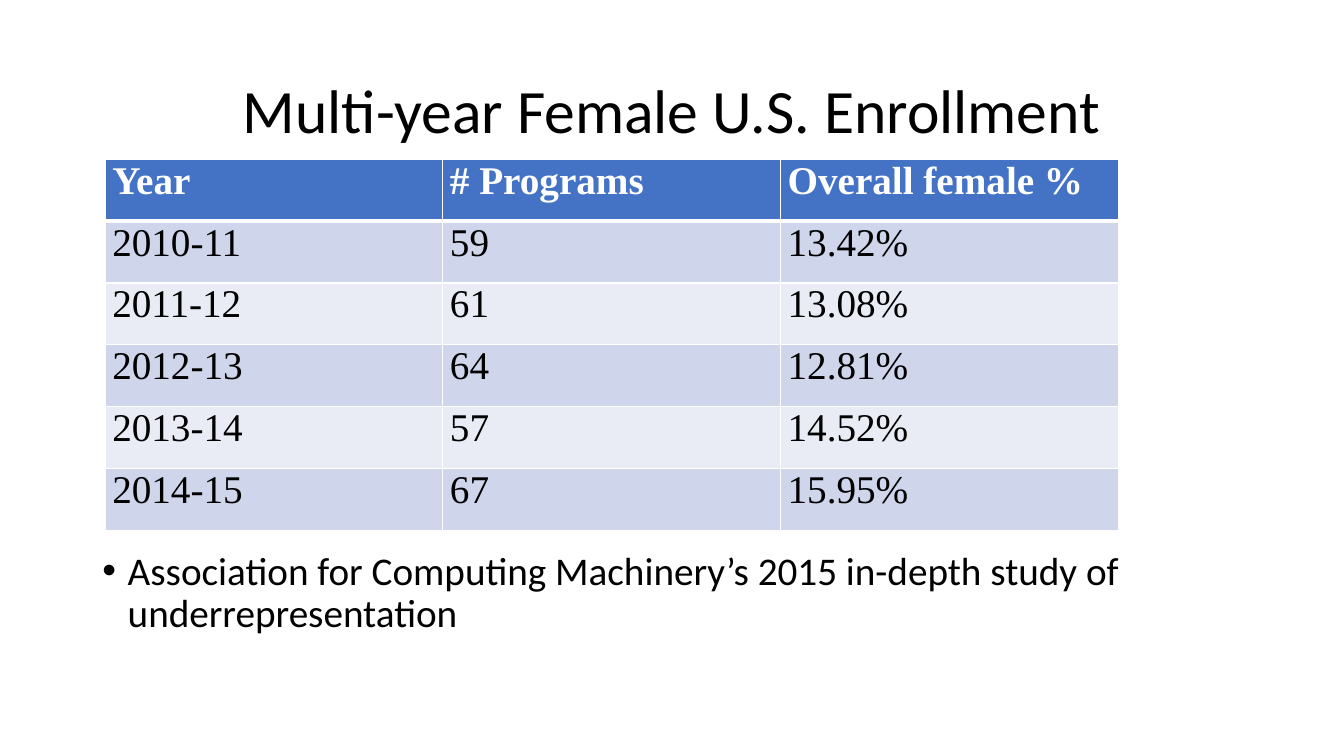
"""Build a slide with a table of female enrollment by year."""
from lxml import etree
from pptx import Presentation
from pptx.dml.color import RGBColor
from pptx.enum import text
from pptx.oxml import ns
from pptx.util import Cm, Pt

ENROLLMENT = [
    ("Year", "# Programs", "Overall female %"),
    ("2010-11", "59", "13.42%"),
    ("2011-12", "61", "13.08%"),
    ("2012-13", "64", "12.81%"),
    ("2013-14", "57", "14.52%"),
    ("2014-15", "67", "15.95%"),
]
HEADER_FILL = "4472C4"
BAND_FILLS = ("E9EBF5", "CFD5EA")


def color(value):
    """Return the colour for a hex string."""
    return RGBColor.from_string(value)


def style_font(paragraph, name, size, value="000000", bold=False):
    """Set the font of every span in a paragraph."""
    for span in paragraph.runs:
        span.font.name = name
        span.font.size = Pt(size)
        span.font.bold = bold
        span.font.color.rgb = color(value)


def add_text(page, content, top, height, size):
    """Add a wide Calibri text box and return it."""
    box = page.shapes.add_textbox(Cm(2.33), Cm(top), Cm(29.21), Cm(height))
    box.text_frame.word_wrap = True
    box.text_frame.text = content
    paragraph = box.text_frame.paragraphs[0]
    paragraph.line_spacing = 0.9
    style_font(paragraph, "Calibri", size)
    return box


def add_title(page, content):
    """Add the centred slide title."""
    box = add_text(page, content, 1.01, 3.68, 44)
    box.text_frame.vertical_anchor = text.MSO_ANCHOR.MIDDLE
    box.text_frame.paragraphs[0].alignment = text.PP_ALIGN.CENTER


def add_bullet(page, content):
    """Add a bulleted note with a hanging indent."""
    box = add_text(page, content, 13.77, 3.02, 28)
    properties = box.text_frame.paragraphs[0]._p.get_or_add_pPr()
    indent = Cm(0.64)
    properties.set("marL", str(indent))
    properties.set("indent", str(-indent))
    font = etree.SubElement(properties, ns.qn("a:buFont"))
    font.set("typeface", "Arial")
    etree.SubElement(properties, ns.qn("a:buChar")).set("char", "•")


def add_borders(cell, widths):
    """Draw white cell borders with a width in points for each side."""
    properties = cell._tc.get_or_add_tcPr()
    for side, width in widths.items():
        line = etree.SubElement(properties, ns.qn(f"a:ln{side}"))
        line.set("w", str(Pt(width)))
        fill = etree.SubElement(line, ns.qn("a:solidFill"))
        etree.SubElement(fill, ns.qn("a:srgbClr")).set("val", "FFFFFF")


def style_cell(cell, content, row):
    """Fill one table cell and format its text."""
    header = row == 0
    add_borders(cell, {"L": 1, "R": 1, "T": 3 if row == 1 else 1, "B": 3 if header else 1})
    cell.fill.solid()
    cell.fill.fore_color.rgb = color(HEADER_FILL if header else BAND_FILLS[row % 2])
    cell.margin_left = cell.margin_right = Cm(0.18)
    cell.margin_top = cell.margin_bottom = 0
    cell.text_frame.text = content
    paragraph = cell.text_frame.paragraphs[0]
    paragraph.alignment = text.PP_ALIGN.JUSTIFY
    style_font(paragraph, "Times New Roman", 28, "FFFFFF" if header else "000000", header)


def add_enrollment_table(page, rows):
    """Add the enrollment table with equal rows and columns."""
    count, width = len(rows), len(rows[0])
    frame = page.shapes.add_table(
        count, width, Cm(2.65), Cm(4.01), Cm(8.51) * width, Cm(1.56) * count)
    for row, values in enumerate(rows):
        for column, content in enumerate(values):
            style_cell(frame.table.cell(row, column), content, row)


def main():
    """Build and save the deck."""
    deck = Presentation()
    deck.slide_width, deck.slide_height = Cm(33.87), Cm(19.05)
    page = deck.slides.add_slide(deck.slide_layouts[6])
    add_title(page, "Multi-year Female U.S. Enrollment")
    add_bullet(page, "Association for Computing Machinery’s 2015 in-depth study of underrepresentation")
    add_enrollment_table(page, ENROLLMENT)
    deck.save("out.pptx")


if __name__ == "__main__":
    main()
